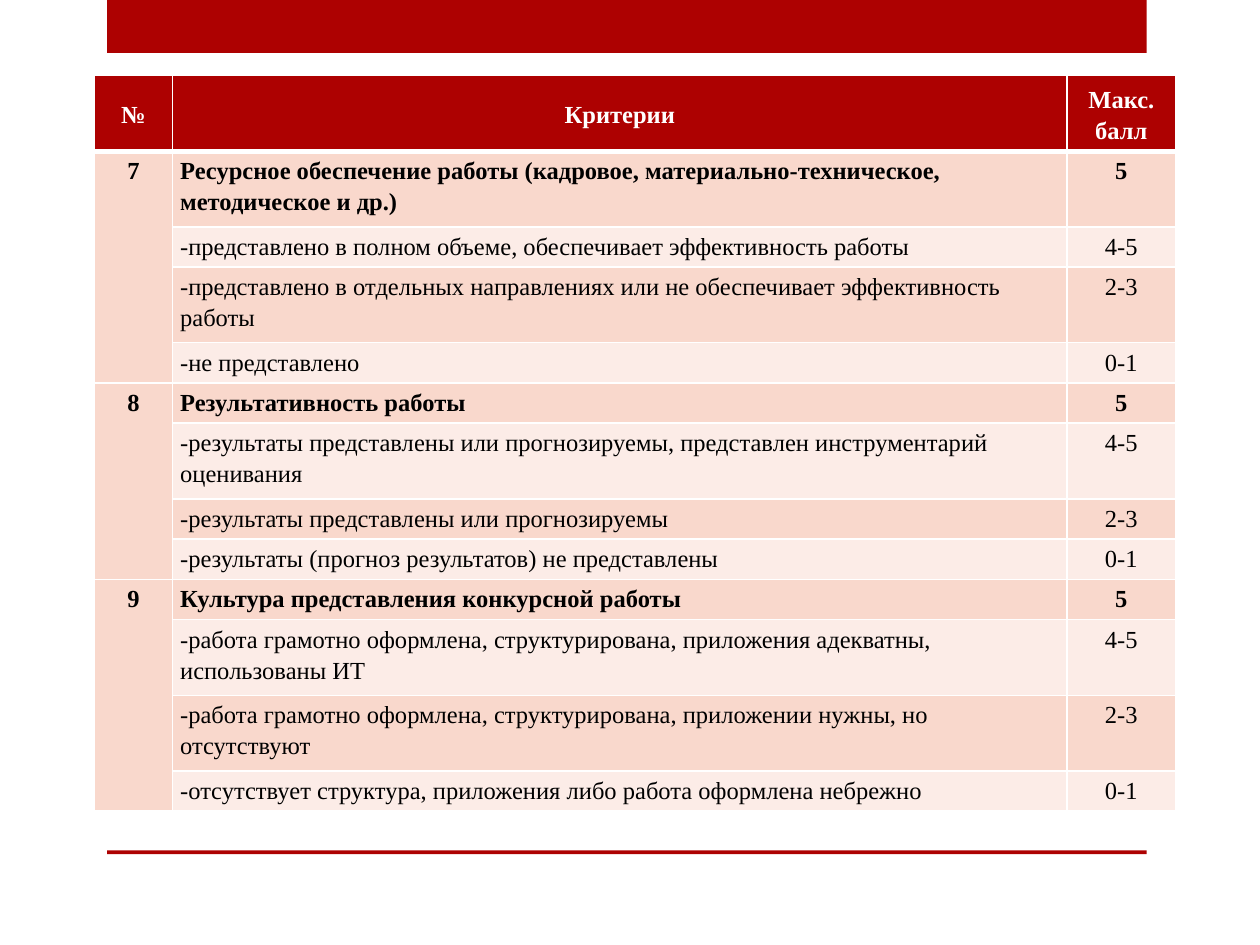
from lxml import etree
from pptx import Presentation
from pptx.dml.color import RGBColor
from pptx.enum.shapes import MSO_SHAPE
from pptx.enum.text import MSO_ANCHOR, PP_ALIGN
from pptx.oxml.ns import qn
from pptx.util import Inches, Pt

RED = RGBColor(0xAD, 0x01, 0x01)
PEACH = RGBColor(0xF9, 0xD8, 0xCC)
PALE = RGBColor(0xFC, 0xEC, 0xE7)
WHITE = RGBColor(0xFF, 0xFF, 0xFF)
BLACK = RGBColor(0, 0, 0)

HEADINGS = ("№", "Критерии", "Макс. балл")
SCORES = ("5", "4-5", "2-3", "0-1")
CRITERIA = {
    "7": (
        "Ресурсное обеспечение работы (кадровое, материально-техническое, методическое и др.)",
        "-представлено в полном объеме, обеспечивает эффективность работы",
        "-представлено в отдельных направлениях или не обеспечивает эффективность работы",
        "-не представлено",
    ),
    "8": (
        "Результативность работы",
        "-результаты представлены или прогнозируемы, представлен инструментарий оценивания",
        "-результаты представлены или прогнозируемы",
        "-результаты (прогноз результатов) не представлены",
    ),
    "9": (
        "Культура представления конкурсной работы",
        "-работа грамотно оформлена, структурирована, приложения адекватны, использованы ИТ",
        "-работа грамотно оформлена, структурирована, приложении нужны, но отсутствуют",
        "-отсутствует структура, приложения либо работа оформлена небрежно",
    ),
}
COLUMN_WIDTHS = (0.62, 7.1, 0.86)
ONE_LINE, TWO_LINES = 0.32, 0.6
LONGEST_LINE = 70  # characters that fit on one line of the criteria column


def set_borders(cell, top, bottom):
    """Draw white borders; top and bottom are widths in points."""
    tc_pr = cell._tc.get_or_add_tcPr()
    for side, width in (("L", 1), ("R", 1), ("T", top), ("B", bottom)):
        line = etree.SubElement(tc_pr, qn(f"a:ln{side}"), w=str(Pt(width)))
        solid = etree.SubElement(line, qn("a:solidFill"))
        etree.SubElement(solid, qn("a:srgbClr"), val=str(WHITE))


def fill_cell(cell, text, color, font_color, bold, align):
    cell.fill.solid()
    cell.fill.fore_color.rgb = color
    cell.margin_left = cell.margin_right = Inches(0.06)
    cell.margin_top = cell.margin_bottom = Inches(0.02)
    cell.text = text
    paragraph = cell.text_frame.paragraphs[0]
    paragraph.alignment = align
    paragraph.line_spacing = 1.15
    font = paragraph.font
    font.name, font.size, font.bold = "Times New Roman", Pt(14), bold
    font.color.rgb = font_color


prs = Presentation()
prs.slide_width, prs.slide_height = Inches(10), Inches(7.5)
slide = prs.slides.add_slide(prs.slide_layouts[6])

for top, height in ((0, 0.42), (6.75, 0.03)):
    band = slide.shapes.add_shape(
        MSO_SHAPE.RECTANGLE, Inches(0.85), Inches(top), Inches(8.25), Inches(height))
    band.shadow.inherit = False
    band.fill.solid()
    band.fill.fore_color.rgb = RED
    band.line.fill.background()

rows = [HEADINGS]
for number, levels in CRITERIA.items():
    for level, (text, score) in enumerate(zip(levels, SCORES)):
        rows.append((number if level == 0 else "", text, score))
heights = [TWO_LINES] + [
    TWO_LINES if len(text) > LONGEST_LINE else ONE_LINE for _, text, _ in rows[1:]]

table = slide.shapes.add_table(
    len(rows), len(HEADINGS), Inches(0.75), Inches(0.6),
    Inches(sum(COLUMN_WIDTHS)), Inches(sum(heights))).table
for column, width in zip(table.columns, COLUMN_WIDTHS):
    column.width = Inches(width)

for r, (values, height) in enumerate(zip(rows, heights)):
    table.rows[r].height = Inches(height)
    is_header = r == 0
    is_criterion = values[0] != ""
    for c, text in enumerate(values):
        cell = table.cell(r, c)
        set_borders(cell, top=3 if r == 1 else 1, bottom=3 if is_header else 1)
        if is_header:
            fill_cell(cell, text, RED, WHITE, True, PP_ALIGN.CENTER)
            cell.vertical_anchor = MSO_ANCHOR.MIDDLE
        else:
            color = PEACH if c == 0 or r % 2 else PALE
            align = PP_ALIGN.LEFT if c == 1 else PP_ALIGN.CENTER
            fill_cell(cell, text, color, BLACK, is_criterion, align)

for first in range(1, len(rows), len(SCORES)):
    table.cell(first, 0).merge(table.cell(first + len(SCORES) - 1, 0))

prs.save("out.pptx")
